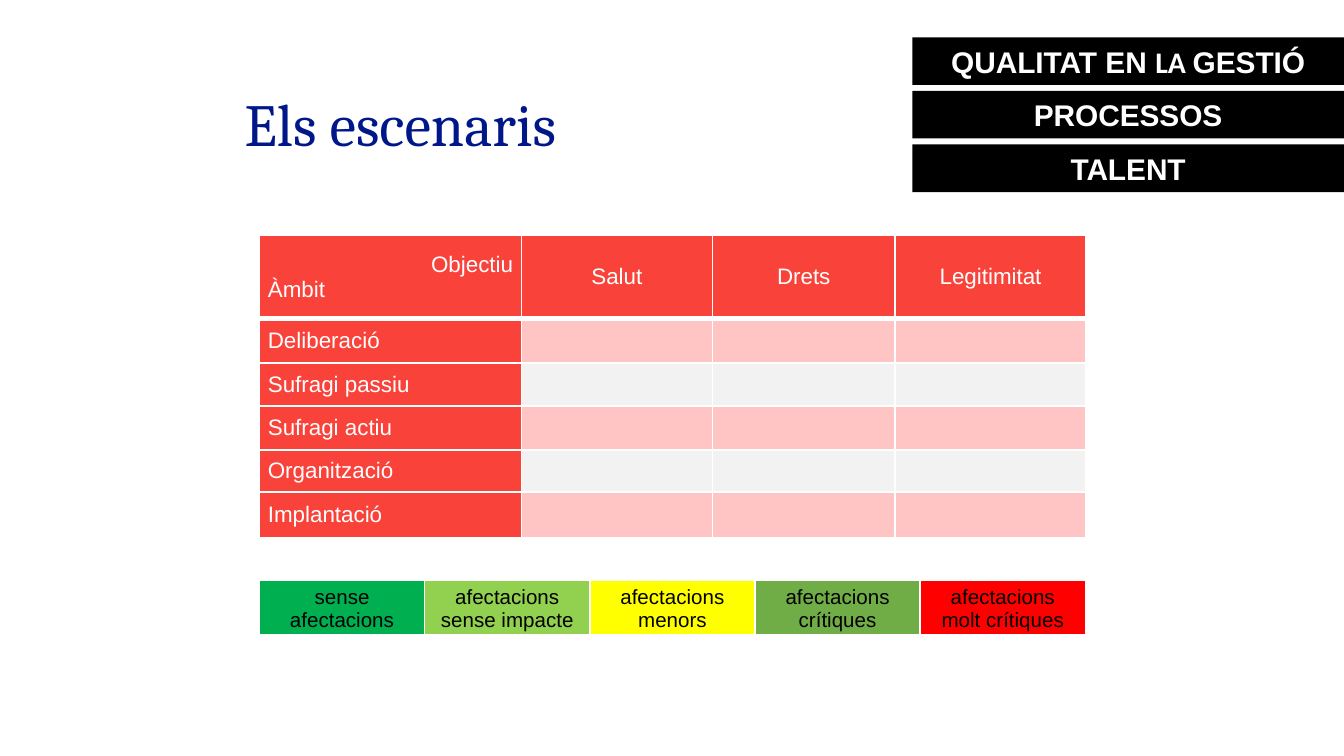
from dataclasses import dataclass

from lxml.etree import SubElement
from pptx import Presentation
from pptx.dml.color import RGBColor
from pptx.enum.shapes import MSO_SHAPE
from pptx.enum.text import MSO_ANCHOR, PP_ALIGN
from pptx.oxml.ns import qn
from pptx.util import Pt


@dataclass(frozen=True)
class Theme:
    title: str = "001789"
    white: str = "FFFFFF"
    black: str = "000000"
    header: str = "F9423A"
    bands: tuple = ("FFC5C5", "F2F2F2")
    title_size: float = 32
    banner_size: float = 16
    table_size: float = 12
    legend_size: float = 11


THEME = Theme()
TABLE_LEFT = 139


def add_run(paragraph, text, size, color, name="Arial", bold=False):
    run = paragraph.add_run()
    run.text = text
    font_format = {"size": Pt(size), "name": name, "bold": bold}
    for attribute, value in font_format.items():
        setattr(run.font, attribute, value)
    run.font.color.rgb = RGBColor.from_string(color)


def style_cell(cell, fill, bottom_width=1):
    """Set the insets, white borders and fill of a table cell."""
    cell_format = {
        "margin_left": Pt(4.5), "margin_right": Pt(4.5),
        "margin_top": 0, "margin_bottom": 0,
        "vertical_anchor": MSO_ANCHOR.MIDDLE,
    }
    for attribute, value in cell_format.items():
        setattr(cell, attribute, value)
    properties = cell._tc.get_or_add_tcPr()
    for side, width in {"L": 1, "R": 1, "T": 1, "B": bottom_width}.items():
        line = SubElement(properties, qn(f"a:ln{side}"), w=str(Pt(width)))
        solid_fill = SubElement(line, qn("a:solidFill"))
        SubElement(solid_fill, qn("a:srgbClr"), val=THEME.white)
    cell.fill.solid()
    cell.fill.fore_color.rgb = RGBColor.from_string(fill)


presentation = Presentation()
presentation.slide_width = Pt(720)
presentation.slide_height = Pt(405)
slide = presentation.slides.add_slide(presentation.slide_layouts[6])

# Title
title_box = slide.shapes.add_textbox(Pt(124), Pt(20), Pt(574.5), Pt(69))
title_frame = title_box.text_frame
title_frame.word_wrap = True
title_frame.vertical_anchor = MSO_ANCHOR.BOTTOM
title_paragraph = title_frame.paragraphs[0]
title_paragraph.line_spacing = 0.9
add_run(title_paragraph, "Els escenaris", THEME.title_size, THEME.title, "Cambria")

# Scenario table
scenario_rows = ["Deliberació", "Sufragi passiu", "Sufragi actiu", "Organització", "Implantació"]
column_widths = [140.4, 102.2, 98, 102.2]
row_heights = [44.6, 23.8, 23, 23.8, 22.3, 24.5]
scenario_frame = slide.shapes.add_table(
    len(row_heights), len(column_widths), Pt(TABLE_LEFT), Pt(126),
    Pt(sum(column_widths)), Pt(sum(row_heights)))
scenarios = scenario_frame.table
scenarios.first_row = scenarios.horz_banding = False
for column, width in zip(scenarios.columns, column_widths):
    column.width = Pt(width)
for row, height in zip(scenarios.rows, row_heights):
    row.height = Pt(height)

for row_index, row in enumerate(scenarios.rows):
    for column_index, cell in enumerate(row.cells):
        is_label = row_index == 0 or column_index == 0
        fill = THEME.header if is_label else THEME.bands[(row_index - 1) % 2]
        style_cell(cell, fill, bottom_width=3 if row_index == 0 else 1)

corner = scenarios.cell(0, 0).text_frame
labels = [
    (corner.paragraphs[0], "Objectiu", PP_ALIGN.RIGHT),
    (corner.add_paragraph(), "Àmbit", PP_ALIGN.JUSTIFY),
]
for index, text in enumerate(["Salut", "Drets", "Legitimitat"], start=1):
    labels.append((scenarios.cell(0, index).text_frame.paragraphs[0], text, PP_ALIGN.CENTER))
for index, text in enumerate(scenario_rows, start=1):
    labels.append((scenarios.cell(index, 0).text_frame.paragraphs[0], text, PP_ALIGN.JUSTIFY))
for paragraph, text, alignment in labels:
    paragraph.alignment = alignment
    add_run(paragraph, text, THEME.table_size, THEME.white)

# Legend
legend_levels = {
    "sense afectacions": "00B050",
    "afectacions sense impacte": "92D050",
    "afectacions menors": "FFFF00",
    "afectacions crítiques": "70AD47",
    "afectacions molt crítiques": "FF0000",
}
legend_frame = slide.shapes.add_table(
    1, len(legend_levels), Pt(TABLE_LEFT), Pt(311), Pt(442.5), Pt(30))
legend = legend_frame.table
legend.first_row = legend.horz_banding = False
for cell, (text, fill) in zip(legend.rows[0].cells, legend_levels.items()):
    style_cell(cell, fill, bottom_width=3)
    paragraph = cell.text_frame.paragraphs[0]
    paragraph.alignment = PP_ALIGN.CENTER
    add_run(paragraph, text, THEME.legend_size, THEME.black)

# Banners
banners = [
    [("QUALITAT EN ", "Arial"), ("LA ", "Calibri"), ("GESTIÓ", "Arial")],
    [("PROCESSOS", "Arial")],
    [("TALENT", "Arial")],
]
for index, parts in enumerate(banners):
    banner = slide.shapes.add_shape(
        MSO_SHAPE.RECTANGLE, Pt(488.8), Pt(20 + 28.7 * index), Pt(231.2), Pt(25.5))
    banner.shadow.inherit = False
    banner.fill.solid()
    banner.fill.fore_color.rgb = RGBColor.from_string(THEME.black)
    banner.line.fill.background()
    banner.text_frame.word_wrap = True
    banner.text_frame.vertical_anchor = MSO_ANCHOR.MIDDLE
    paragraph = banner.text_frame.paragraphs[0]
    paragraph.alignment = PP_ALIGN.CENTER
    for text, name in parts:
        add_run(paragraph, text, THEME.banner_size, THEME.white, name, bold=True)

presentation.save("out.pptx")
